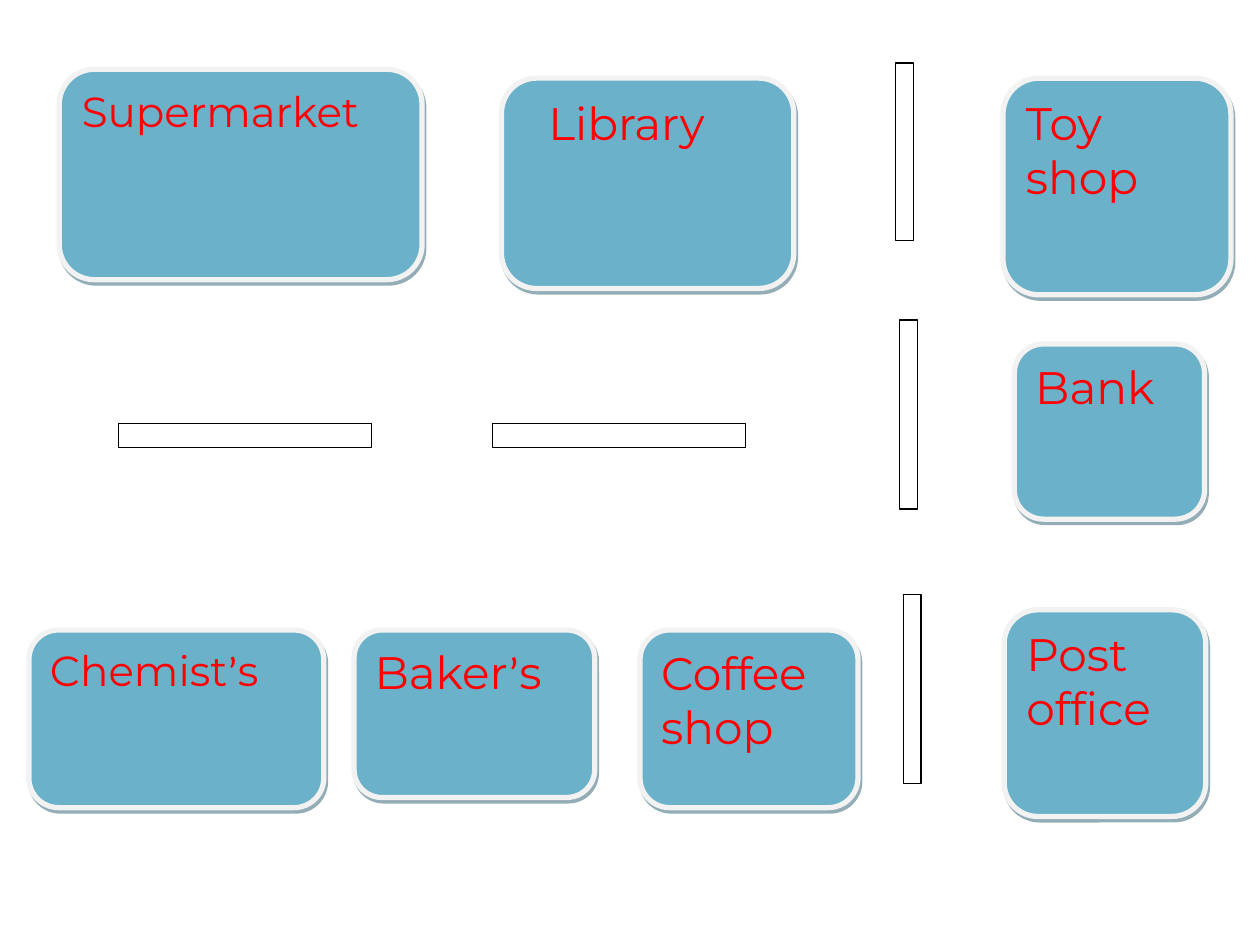
from dataclasses import dataclass
from itertools import groupby

from lxml.etree import SubElement
from pptx import Presentation
from pptx.dml.color import RGBColor
from pptx.enum.shapes import MSO_SHAPE
from pptx.enum.text import MSO_ANCHOR, PP_ALIGN
from pptx.oxml.ns import qn
from pptx.util import Inches, Pt


@dataclass(frozen=True)
class Theme:
    building: str = "6BB1C9"
    border: str = "F2F2F2"
    shadow: str = "295D70"
    label: str = "FF0000"
    road: str = "FFFFFF"
    road_edge: str = "000000"
    font: str = "Montserrat"
    apostrophe_font: str = "Calibri"
    large: float = 26
    small: float = 24
    border_width: float = 3
    road_width: float = 0.75


@dataclass(frozen=True)
class Building:
    name: str
    left: float
    top: float
    width: float
    height: float
    size: float = Theme.large
    indent: float = 0.1


@dataclass(frozen=True)
class Road:
    left: float
    top: float
    width: float
    height: float


THEME = Theme()
BOTTOM_ROW = 5
ROAD_LENGTH, ROAD_HEIGHT, ROAD_TOP = 2.01, 0.19, 3.36
SIDE_ROAD_WIDTH = 0.14

BUILDINGS = [
    # Top row
    Building("Supermarket", 0.47, 0.55, 2.88, 1.67, THEME.small),
    Building("Library", 3.98, 0.62, 2.32, 1.67, indent=0.29),
    # Right side
    Building("Toy shop", 7.96, 0.62, 1.81, 1.72),
    Building("Bank", 8.05, 2.73, 1.51, 1.39),
    Building("Post office", 7.97, 4.84, 1.6, 1.64),
    # Bottom row
    Building("Chemist’s", 0.23, BOTTOM_ROW, 2.34, 1.41, THEME.small),
    Building("Baker’s", 2.81, BOTTOM_ROW, 1.91, 1.33),
    Building("Coffee shop", 5.08, BOTTOM_ROW, 1.73, 1.41),
]

ROADS = [
    # Main street
    *(Road(left, ROAD_TOP, ROAD_LENGTH, ROAD_HEIGHT) for left in (0.94, 3.91)),
    # Side street
    *(Road(left, top, SIDE_ROAD_WIDTH, length)
      for left, top, length in ((7.11, 0.5, 1.41), (7.14, 2.54, 1.5), (7.17, 4.72, 1.5))),
]


def add_block(page, kind, place: Building | Road, fill: str, line: str, width: float):
    """Draw a filled, outlined shape without a shadow."""
    shape = page.shapes.add_shape(
        kind, Inches(place.left), Inches(place.top),
        Inches(place.width), Inches(place.height))
    shape.shadow.inherit = False
    shape.fill.solid()
    shape.fill.fore_color.rgb = RGBColor.from_string(fill)
    shape.line.color.rgb = RGBColor.from_string(line)
    shape.line.width = Pt(width)
    return shape


def add_hard_shadow(shape) -> None:
    """Cast an unblurred, half-transparent shadow down and to the right."""
    effects = shape._element.spPr.find(qn("a:effectLst"))
    shadow = SubElement(effects, qn("a:outerShdw"), blurRad="0",
                        dist=str(Pt(2.2)), dir=str(63 * 60000),
                        algn="ctr", rotWithShape="0")
    color = SubElement(shadow, qn("a:srgbClr"), val=THEME.shadow)
    SubElement(color, qn("a:alpha"), val="50000")


def add_label(shape, building: Building) -> None:
    """Write the name at the top left, with the apostrophe in its own font."""
    frame = shape.text_frame
    frame.word_wrap = True
    frame.vertical_anchor = MSO_ANCHOR.TOP
    frame.margin_left = Inches(building.indent)
    para = frame.paragraphs[0]
    para.alignment = PP_ALIGN.LEFT
    for is_apostrophe, letters in groupby(building.name, lambda letter: letter == "’"):
        span = para.add_run()
        span.text = "".join(letters)
        span.font.name = THEME.apostrophe_font if is_apostrophe else THEME.font
        span.font.size = Pt(building.size)
        span.font.color.rgb = RGBColor.from_string(THEME.label)


def add_building(page, building: Building) -> None:
    shape = add_block(page, MSO_SHAPE.ROUNDED_RECTANGLE, building,
                      THEME.building, THEME.border, THEME.border_width)
    add_hard_shadow(shape)
    add_label(shape, building)


def add_road(page, road: Road) -> None:
    add_block(page, MSO_SHAPE.RECTANGLE, road,
              THEME.road, THEME.road_edge, THEME.road_width)


def main() -> None:
    deck = Presentation()
    deck.slide_width, deck.slide_height = Inches(10), Inches(7.5)
    page = deck.slides.add_slide(deck.slide_layouts[6])
    for building in BUILDINGS:
        add_building(page, building)
    for road in ROADS:
        add_road(page, road)
    deck.save("out.pptx")


if __name__ == "__main__":
    main()
